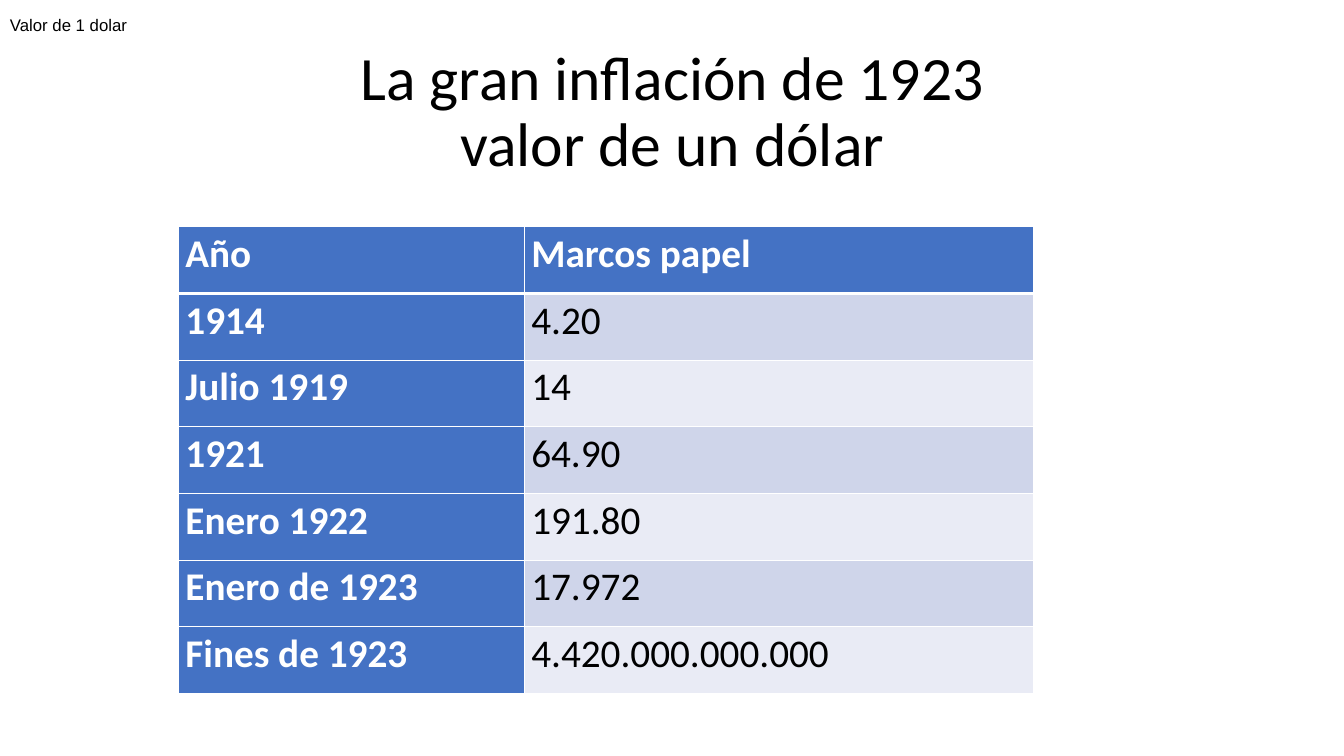
from dataclasses import dataclass

from lxml.etree import SubElement
from pptx import Presentation
from pptx.dml.color import RGBColor as Color
from pptx.enum.text import MSO_ANCHOR as Anchor, MSO_AUTO_SIZE as AutoSize, PP_ALIGN as Align
from pptx.oxml.ns import qn
from pptx.util import Inches, Pt


@dataclass(frozen=True)
class Theme:
    white: str = "FFFFFF"
    black: str = "000000"
    accent: str = "4472C4"
    bands: tuple = ("CFD5EA", "E9EBF5")
    main_font: str = "Calibri"
    note_font: str = "Arial"
    title_size: int = 44
    table_size: int = 28
    note_size: int = 12


THEME = Theme()
TITLE_LINES = ["La gran inflación de 1923", "valor de un dólar"]
RATES = [
    ("Año", "Marcos papel"),
    ("1914", "4.20"),
    ("Julio 1919", "14"),
    ("1921", "64.90"),
    ("Enero 1922", "191.80"),
    ("Enero de 1923", "17.972"),
    ("Fines de 1923", "4.420.000.000.000"),
]


def apply(target, values):
    for name, value in values.items():
        setattr(target, name, value)


def add_span(para, text, font, size, color, bold=False):
    span = para.add_run()
    span.text = text
    apply(span.font, {"name": font, "size": Pt(size), "bold": bold})
    span.font.color.rgb = Color.from_string(color)


def place(shape, box):
    apply(shape, dict(zip(("left", "top", "width", "height"), map(Inches, box))))


# Title
def fill_title(title, box):
    place(title, box)
    apply(title.text_frame, {"vertical_anchor": Anchor.MIDDLE, "word_wrap": True,
                             "auto_size": AutoSize.NONE})
    para = title.text_frame.paragraphs[0]
    apply(para, {"alignment": Align.CENTER, "line_spacing": 0.9})
    for index, line in enumerate(TITLE_LINES):
        if index:
            para.add_line_break()
        add_span(para, line, THEME.main_font, THEME.title_size, THEME.black)


# Table of exchange rates
def set_borders(cell, bottom_width):
    props = cell._tc.get_or_add_tcPr()
    for side, width in {"L": 1, "R": 1, "T": 1, "B": bottom_width}.items():
        line = SubElement(props, qn(f"a:ln{side}"), w=str(Pt(width)))
        fill = SubElement(line, qn("a:solidFill"))
        SubElement(fill, qn("a:srgbClr"), val=THEME.white)


def fill_cell(cell, text, row, column):
    is_heading = row == 0 or column == 0
    set_borders(cell, 3 if row == 0 else 1)
    cell.fill.solid()
    cell.fill.fore_color.rgb = Color.from_string(
        THEME.accent if is_heading else THEME.bands[(row - 1) % 2])
    apply(cell, {"margin_left": Inches(0.07), "margin_right": Inches(0.07),
                 "margin_top": 0, "margin_bottom": 0})
    para = cell.text_frame.paragraphs[0]
    para.line_spacing = 1.07
    add_span(para, text, THEME.main_font, THEME.table_size,
             THEME.white if is_heading else THEME.black, is_heading)


def add_rates(page, box, first_width):
    frame = page.shapes.add_table(len(RATES), 2, *map(Inches, box))
    table = frame.table
    for column, width in zip(table.columns, (first_width, box[2] - first_width)):
        column.width = Inches(width)
    for row, texts in enumerate(RATES):
        for column, text in enumerate(texts):
            fill_cell(table.cell(row, column), text, row, column)


# Corner note
def add_note(page, box):
    note = page.shapes.add_textbox(*map(Inches, box))
    apply(note.text_frame, {"word_wrap": True, "vertical_anchor": Anchor.MIDDLE})
    add_span(note.text_frame.paragraphs[0], "Valor de 1 dolar",
             THEME.note_font, THEME.note_size, THEME.black)


def main():
    deck = Presentation()
    apply(deck, {"slide_width": Inches(13.33), "slide_height": Inches(7.5)})
    page = deck.slides.add_slide(deck.slide_layouts[5])
    fill_title(page.shapes.title, (0.92, 0.4, 11.5, 1.45))
    add_rates(page, (1.77, 2.25, 8.48, 4.63), 3.43)
    add_note(page, (0, 0, 13.33, 0.5))
    deck.save("out.pptx")


if __name__ == "__main__":
    main()
